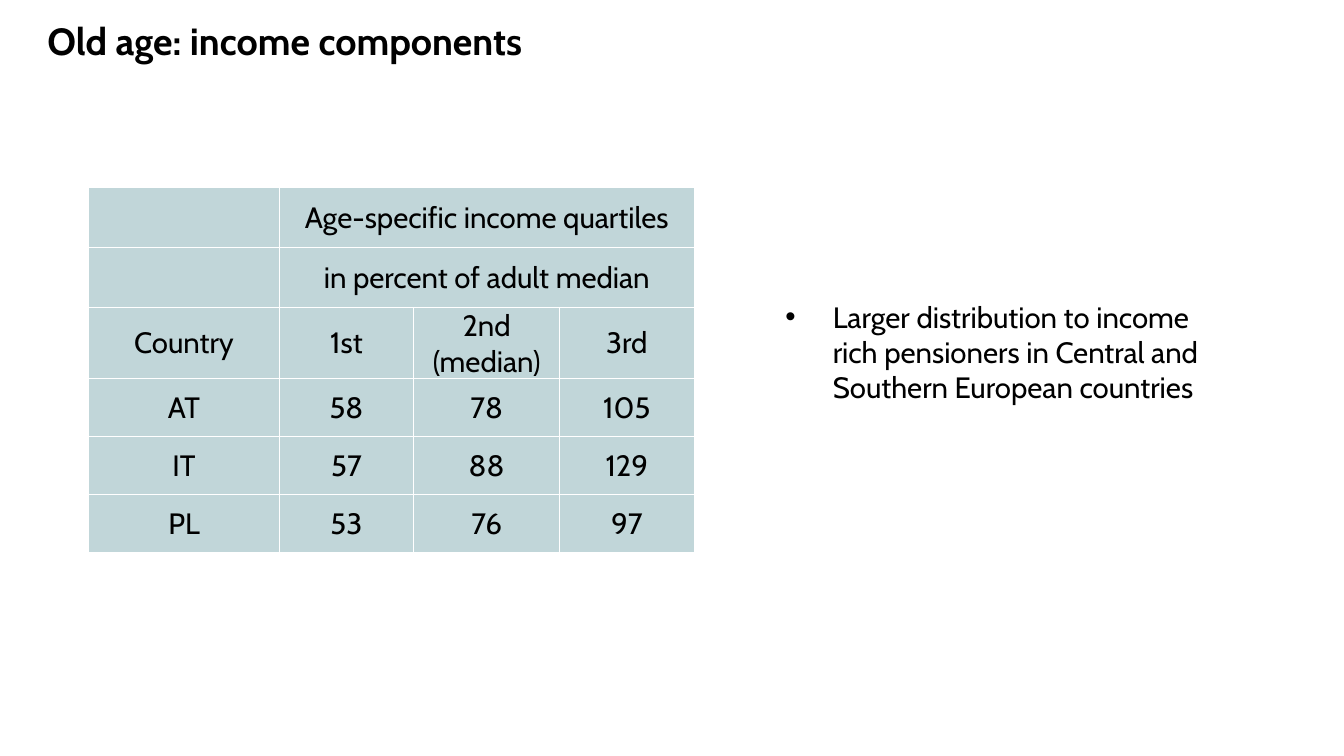
from lxml import etree
from pptx import Presentation
from pptx.dml.color import RGBColor
from pptx.enum import text
from pptx.oxml import ns
from pptx.util import Pt

FONT = "Cabin"
BLACK = RGBColor(0x00, 0x00, 0x00)
WHITE = RGBColor(0xFF, 0xFF, 0xFF)
TEAL = RGBColor(0x32, 0x78, 0x82)

COLUMNS = [181.5, 128, 139, 128]
ROWS = [57, 57, 57, 55, 55, 55]
QUARTILES = [
    ["", "Age-specific income quartiles", "", ""],
    ["", "in percent of adult median", "", ""],
    ["Country", "1st", "2nd (median)", "3rd"],
    ["AT", "58", "78", "105"],
    ["IT", "57", "88", "129"],
    ["PL", "53", "76", "97"],
]


def add_child(parent, tag, **attrs):
    """Append a DrawingML element to a parent."""
    return etree.SubElement(parent, ns.qn(tag), attrs)


def style_text(p, size, bold=False):
    """Format every run of a paragraph."""
    for r in p.runs:
        r.font.name = FONT
        r.font.size = Pt(size)
        r.font.bold = bold
        r.font.color.rgb = BLACK


def style_cell(cell):
    """Give a cell white borders, a pale teal fill and centred text."""
    tc_pr = cell._tc.get_or_add_tcPr()
    for side in ("a:lnL", "a:lnR", "a:lnT", "a:lnB"):
        ln = add_child(tc_pr, side, w=str(Pt(1)))
        add_child(add_child(ln, "a:solidFill"), "a:srgbClr", val=str(WHITE))
    cell.fill.solid()
    cell.fill.fore_color.rgb = TEAL
    color = tc_pr.find(ns.qn("a:solidFill")).find(ns.qn("a:srgbClr"))
    add_child(color, "a:alpha", val="30000")
    cell.vertical_anchor = text.MSO_ANCHOR.MIDDLE
    cell.margin_left = cell.margin_right = cell.margin_top = Pt(0.75)
    cell.margin_bottom = Pt(0)
    p = cell.text_frame.paragraphs[0]
    p.alignment = text.PP_ALIGN.CENTER
    style_text(p, 28)


def add_text(s, box, wording, size, bold=False):
    """Place a wrapping text box and return its text frame."""
    tf = s.shapes.add_textbox(*map(Pt, box)).text_frame
    tf.word_wrap = True
    tf.text = wording
    style_text(tf.paragraphs[0], size, bold)
    return tf


def add_title(s, box):
    """Place the bold heading across the top."""
    tf = add_text(s, box, "Old age: income components", 36, bold=True)
    tf.vertical_anchor = text.MSO_ANCHOR.MIDDLE
    tf.paragraphs[0]._p.get_or_add_pPr().set("marL", str(Pt(38)))


def add_quartile_table(s, left, top):
    """Place the income quartile table at a corner."""
    frame = s.shapes.add_table(len(ROWS), len(COLUMNS), Pt(left), Pt(top),
                               Pt(sum(COLUMNS)), Pt(sum(ROWS)))
    table = frame.table
    table.first_row = table.horz_banding = False
    for column, width in zip(table.columns, COLUMNS):
        column.width = Pt(width)
    for row, height, words in zip(table.rows, ROWS, QUARTILES):
        row.height = Pt(height)
        for cell, word in zip(row.cells, words):
            cell.text = word
            style_cell(cell)
    for i in range(2):
        table.cell(i, 1).merge(table.cell(i, 3))


def add_finding(s, box):
    """Place the bulleted finding beside the table."""
    tf = add_text(s, box, "Larger distribution to income rich pensioners "
                  "in Central and Southern European countries", 28)
    tf.margin_top = Pt(37.6)
    p_pr = tf.paragraphs[0]._p.get_or_add_pPr()
    p_pr.set("marL", str(Pt(45)))
    p_pr.set("indent", str(Pt(-45)))
    add_child(p_pr, "a:buFont", typeface="Arial")
    add_child(p_pr, "a:buChar", char="•")


def main():
    """Build and save the slide."""
    prs = Presentation()
    prs.slide_width, prs.slide_height = Pt(1280), Pt(720)
    s = prs.slides.add_slide(prs.slide_layouts[6])
    add_title(s, (0, 0, 1280, 76.5))
    add_quartile_table(s, 84.5, 178.75)
    add_finding(s, (741, 247, 436, 143))
    prs.save("out.pptx")


if __name__ == "__main__":
    main()
